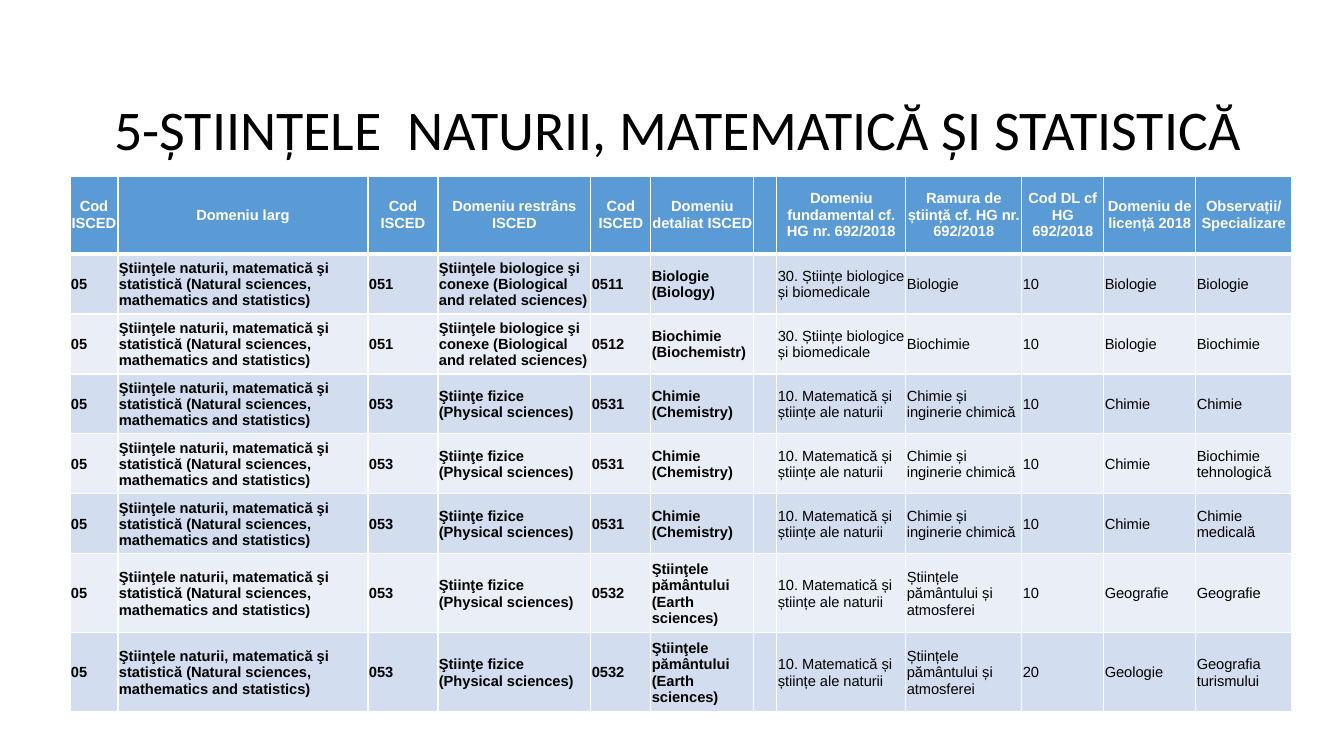
from dataclasses import dataclass

import pptx
import pptx.dml.color
import pptx.enum.text
import pptx.oxml
import pptx.oxml.ns
import pptx.slide
import pptx.table
import pptx.util

EMU_PER_INCH = 914400
PX_PER_INCH = 100.8
WHITE, BLACK, HEADER_BLUE = "FFFFFF", "000000", "5B9BD5"
BAND_FILLS = ("D2DEEF", "EAEFF7")
TITLE = "5-ȘTIINȚELE  NATURII, MATEMATICĂ ȘI STATISTICĂ"

COLUMN_WIDTHS = (48, 250, 70, 153, 60, 103, 23, 129, 116, 82, 92, 96)
ROW_HEIGHTS = (78, 60, 60, 60, 60, 60, 79, 79)
HEADINGS = (
    "Cod ISCED", "Domeniu larg", "Cod ISCED", "Domeniu restrâns ISCED",
    "Cod ISCED", "Domeniu detaliat ISCED", "",
    "Domeniu fundamental cf. HG nr. 692/2018",
    "Ramura de știință cf. HG nr. 692/2018", "Cod DL cf HG 692/2018",
    "Domeniu de licență 2018", "Observații/ Specializare",
)
BOLD_COLUMNS = 6

BROAD = ("05", "Ştiinţele naturii, matematică şi statistică "
               "(Natural sciences, mathematics and statistics)")
BIOLOGICAL = ("051", "Ştiinţele biologice şi conexe (Biological and related sciences)")
PHYSICAL = ("053", "Ştiinţe fizice (Physical sciences)")
CHEMISTRY = ("0531", "Chimie (Chemistry)")
EARTH = ("0532", "Ştiinţele pământului (Earth sciences)")
BIOMEDICAL = "30. Științe biologice și biomedicale"
NATURE = "10. Matematică și științe ale naturii"
CHEMICAL_BRANCH = "Chimie și inginerie chimică"
EARTH_BRANCH = "Științele pământului și atmosferei"


@dataclass(frozen=True)
class Specialization:
    narrow: tuple[str, str]
    detailed: tuple[str, str]
    fundamental: str
    branch: str
    code: str
    licence: str
    name: str

    def cells(self) -> tuple[str, ...]:
        return (*BROAD, *self.narrow, *self.detailed, "", self.fundamental,
                self.branch, self.code, self.licence, self.name)


@dataclass(frozen=True)
class CellStyle:
    fill: str
    color: str
    bold: bool
    centred: bool
    margin: int
    top: int
    bottom: int


SPECIALIZATIONS = (
    Specialization(BIOLOGICAL, ("0511", "Biologie (Biology)"), BIOMEDICAL,
                   "Biologie", "10", "Biologie", "Biologie"),
    Specialization(BIOLOGICAL, ("0512", "Biochimie (Biochemistr)"), BIOMEDICAL,
                   "Biochimie", "10", "Biologie", "Biochimie"),
    *(Specialization(PHYSICAL, CHEMISTRY, NATURE, CHEMICAL_BRANCH, "10", "Chimie", name)
      for name in ("Chimie", "Biochimie tehnologică", "Chimie medicală")),
    Specialization(PHYSICAL, EARTH, NATURE, EARTH_BRANCH, "10", "Geografie", "Geografie"),
    Specialization(PHYSICAL, EARTH, NATURE, EARTH_BRANCH, "20", "Geologie",
                   "Geografia turismului"),
)


def px(length: int) -> pptx.util.Emu:
    return pptx.util.Emu(round(length * EMU_PER_INCH / PX_PER_INCH))


def rgb(color: str) -> pptx.dml.color.RGBColor:
    return pptx.dml.color.RGBColor.from_string(color)


def add_title(slide: pptx.slide.Slide) -> None:
    box = slide.shapes.add_textbox(px(98), px(96), px(1159), px(72))
    frame = box.text_frame
    frame.word_wrap = True
    frame.vertical_anchor = pptx.enum.text.MSO_ANCHOR.MIDDLE
    frame.text = TITLE
    para = frame.paragraphs[0]
    para.alignment = pptx.enum.text.PP_ALIGN.CENTER
    para.line_spacing = 0.9
    para.font.name = "Calibri"
    para.font.size = pptx.util.Pt(40)
    para.font.color.rgb = rgb(BLACK)


def add_borders(cell: pptx.table._Cell, top: int, bottom: int) -> None:
    """Add white borders; top and bottom widths are in points."""
    properties = cell._tc.get_or_add_tcPr()
    namespace = pptx.oxml.ns.nsdecls("a")
    for side, width in (("L", 1), ("R", 1), ("T", top), ("B", bottom)):
        properties.append(pptx.oxml.parse_xml(
            f'<a:ln{side} {namespace} w="{pptx.util.Pt(width)}"><a:solidFill>'
            f'<a:srgbClr val="{WHITE}"/></a:solidFill></a:ln{side}>'))


def fill_cell(cell: pptx.table._Cell, text: str, style: CellStyle) -> None:
    add_borders(cell, style.top, style.bottom)
    cell.fill.solid()
    cell.fill.fore_color.rgb = rgb(style.fill)
    cell.vertical_anchor = pptx.enum.text.MSO_ANCHOR.MIDDLE
    cell.margin_left = cell.margin_right = cell.margin_top = px(style.margin)
    cell.margin_bottom = 0
    cell.text_frame.text = text
    para = cell.text_frame.paragraphs[0]
    align = pptx.enum.text.PP_ALIGN
    para.alignment = align.CENTER if style.centred else align.LEFT
    para.font.name = "Arial"
    para.font.size = pptx.util.Pt(10.5)
    para.font.bold = style.bold
    para.font.color.rgb = rgb(style.color)


def add_domain_table(slide: pptx.slide.Slide) -> None:
    table = slide.shapes.add_table(
        len(ROW_HEIGHTS), len(COLUMN_WIDTHS), px(70), px(176),
        px(sum(COLUMN_WIDTHS)), px(sum(ROW_HEIGHTS))).table
    for column, width in zip(table.columns, COLUMN_WIDTHS):
        column.width = px(width)
    for row, height in zip(table.rows, ROW_HEIGHTS):
        row.height = px(height)

    header = CellStyle(HEADER_BLUE, WHITE, True, True, 0, 1, 3)
    for column, heading in enumerate(HEADINGS):
        fill_cell(table.cell(0, column), heading, header)
    for row, specialization in enumerate(SPECIALIZATIONS, start=1):
        for column, text in enumerate(specialization.cells()):
            style = CellStyle(BAND_FILLS[(row - 1) % 2], BLACK, column < BOLD_COLUMNS,
                              False, 1, 3 if row == 1 else 1, 1)
            fill_cell(table.cell(row, column), text, style)


def main() -> None:
    deck = pptx.Presentation()
    deck.slide_width, deck.slide_height = px(1344), px(756)
    slide = deck.slides.add_slide(deck.slide_layouts[6])
    add_title(slide)
    add_domain_table(slide)
    deck.save("out.pptx")


if __name__ == "__main__":
    main()
